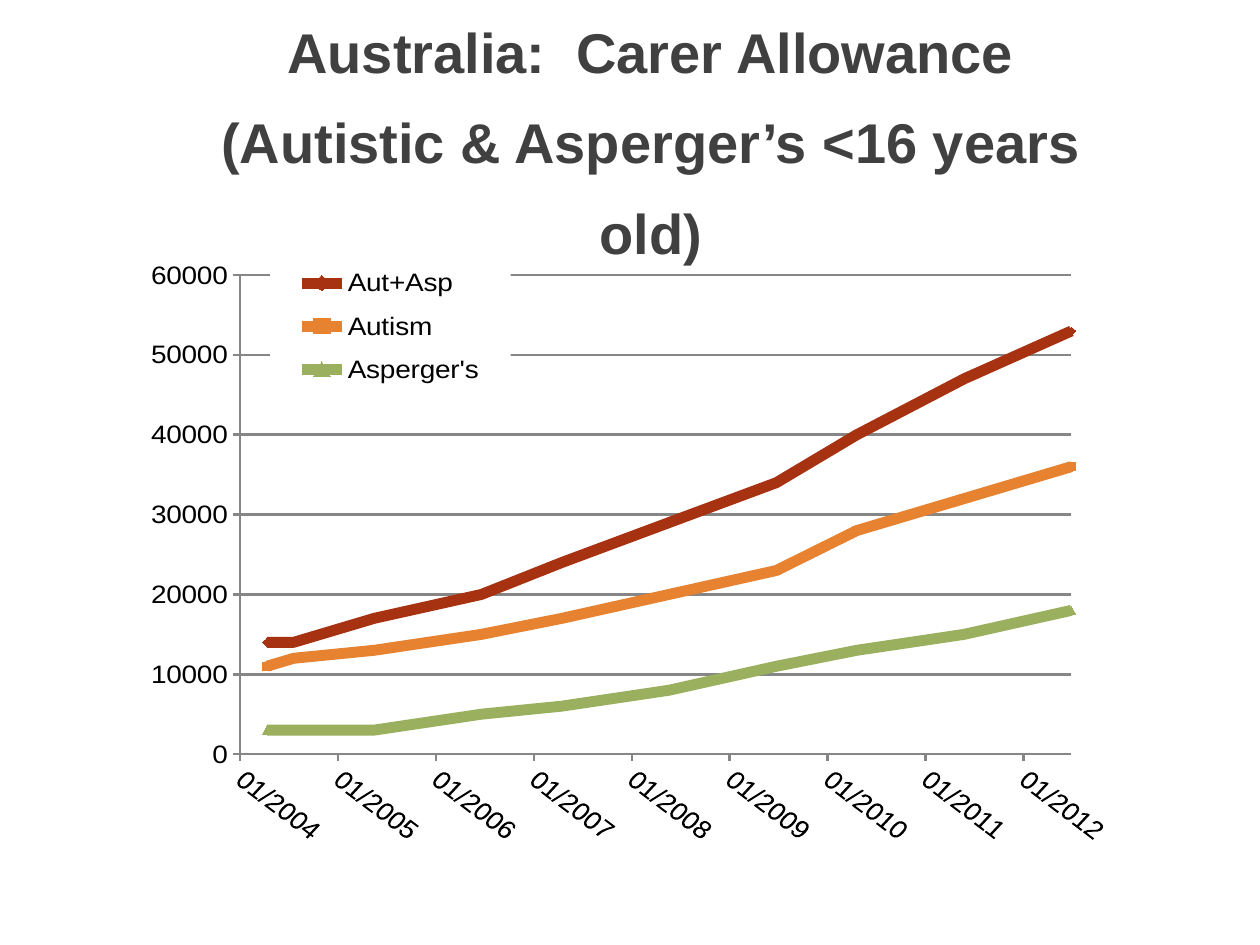
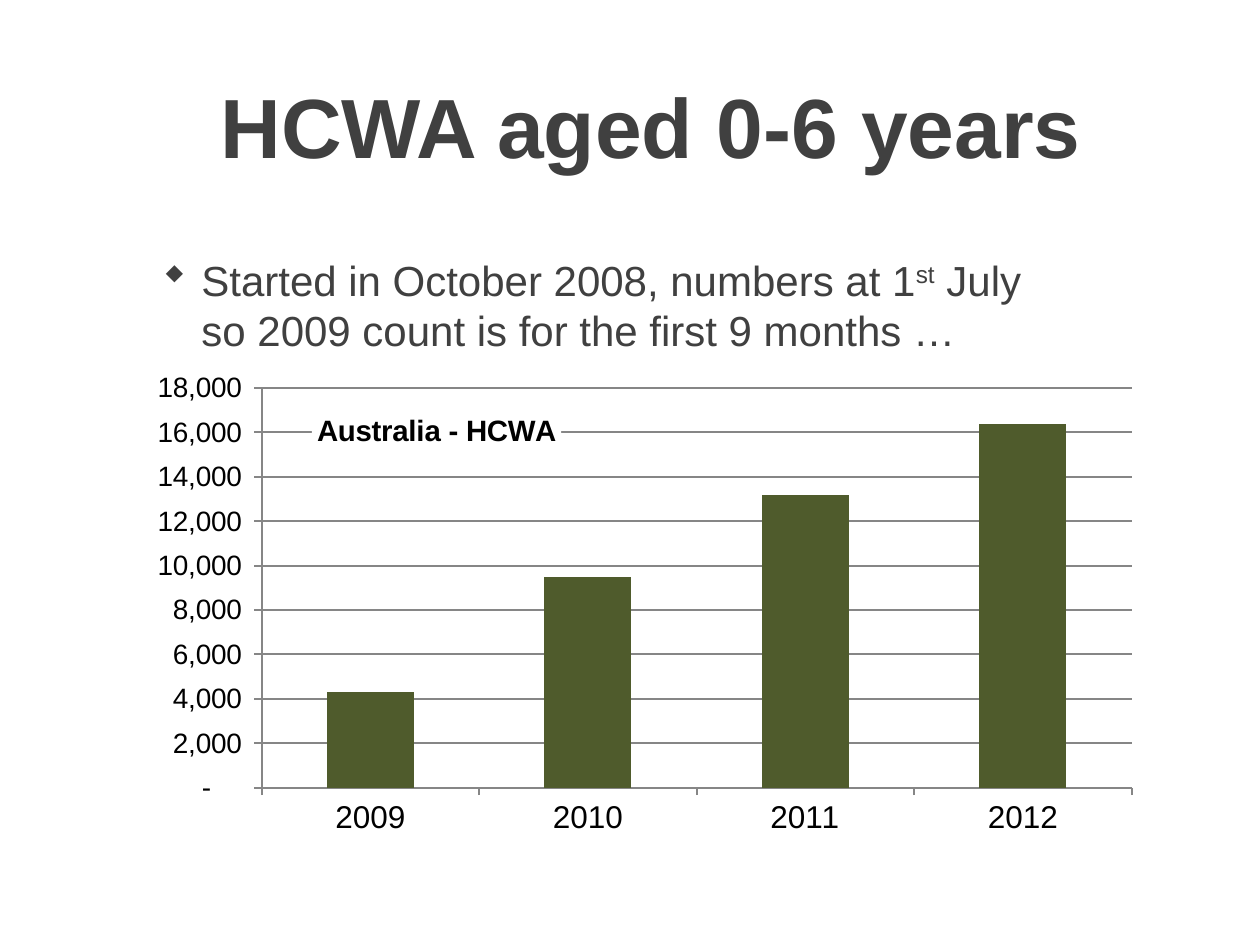
from lxml import etree
from pptx import Presentation
from pptx import util as u
from pptx.chart import data
from pptx.dml.color import RGBColor
from pptx.enum import chart as ch, text
from pptx.oxml import ns, parse_xml

FONT = "Arial"
GREY, BLACK, WHITE, RULE = "404040", "000000", "FFFFFF", "868686"
LEFT, WIDTH, TOP, HEIGHT = 1.19, 7.95, 1.97, 4.73


def color(hexa):
    return RGBColor.from_string(hexa)


def apply(obj, **values):
    for name, value in values.items():
        setattr(obj, name, value)


def style(font, size, hexa=BLACK, bold=False):
    apply(font, name=FONT, size=u.Pt(size), bold=bold)
    font.color.rgb = color(hexa)


def place(node, x, y, w=None, h=None, inner=False):
    """Give a chart part a manual layout, in fractions of the chart."""
    for old in node.findall(ns.qn("c:layout")):
        node.remove(old)
    layout = etree.Element(ns.qn("c:layout"))
    manual = etree.SubElement(layout, ns.qn("c:manualLayout"))
    parts = [("layoutTarget", "inner" if inner else None),
             ("xMode", "edge"), ("yMode", "edge"),
             ("x", x), ("y", y), ("w", w), ("h", h)]
    for name, value in parts:
        if value is not None:
            etree.SubElement(manual, ns.qn(f"c:{name}"), val=str(value))
    over = node.find(ns.qn("c:overlay"))
    node.insert(0 if over is None else node.index(over), layout)


class Deck:
    """Holds the presentation, its style and the current slide."""

    def __init__(self):
        self.prs = Presentation()
        apply(self.prs, slide_width=u.Inches(10), slide_height=u.Inches(7.5))
        self.slide = None

    def page(self, title, size):
        self.slide = self.prs.slides.add_slide(self.prs.slide_layouts[6])
        frame = self.frame(0.3, 1.46)
        frame.vertical_anchor = text.MSO_ANCHOR.MIDDLE
        para = frame.paragraphs[0]
        para.text = title
        apply(para, alignment=text.PP_ALIGN.CENTER, line_spacing=u.Pt(52))
        style(para.font, size, GREY, True)

    def frame(self, top, height):
        box = self.slide.shapes.add_textbox(
            u.Inches(LEFT), u.Inches(top), u.Inches(WIDTH), u.Inches(height))
        box.text_frame.word_wrap = True
        return box.text_frame

    def bullet(self, *runs):
        """Each run is a pair: its words and whether it is raised."""
        para = self.frame(TOP, HEIGHT).paragraphs[0]
        props = para._p.get_or_add_pPr()
        indent = u.Inches(0.31)
        props.set("marL", str(indent))
        props.set("indent", str(-indent))
        etree.SubElement(props, ns.qn("a:buFont"), typeface="Wingdings",
                         charset="2")
        etree.SubElement(props, ns.qn("a:buChar"), char="w")
        style(para.font, 24, GREY)
        for words, raised in runs:
            first, *rest = words.split("\n")
            for i, line in enumerate([first, *rest]):
                if i:
                    para.add_line_break()
                run = para.add_run()
                run.text = line
                style(run.font, 24, GREY)
                if raised:
                    run._r.get_or_add_rPr().set("baseline", "30000")

    def chart(self, kind, top, values, plot):
        height = TOP + HEIGHT - top
        chart = self.slide.shapes.add_chart(
            kind, u.Inches(LEFT), u.Inches(top), u.Inches(WIDTH),
            u.Inches(height), values).chart
        apply(chart, has_legend=False, has_title=False)
        style(chart.font, 14)
        place(chart.element.xpath(".//c:plotArea")[0], *plot, inner=True)
        return chart

    def axis(self, axis, size, form, line, grid=False, **scale):
        apply(axis, has_major_gridlines=grid,
              major_tick_mark=ch.XL_TICK_MARK.OUTSIDE,
              minor_tick_mark=ch.XL_TICK_MARK.NONE, **scale)
        style(axis.tick_labels.font, size)
        apply(axis.tick_labels, number_format=form,
              number_format_is_linked=False)
        lines = [axis.format.line]
        if grid:
            lines.append(axis.major_gridlines.format.line)
        for rule in lines:
            rule.color.rgb = color(RULE)
            rule.width = u.Pt(line)

    def legend(self, chart, size, spot):
        chart.has_legend = True
        apply(chart.legend, position=ch.XL_LEGEND_POSITION.RIGHT,
              include_in_layout=False)
        style(chart.legend.font, size)
        node = chart.element.xpath(".//c:legend")[0]
        place(node, *spot)
        fill = parse_xml(
            f'<c:spPr {ns.nsdecls("c", "a")}><a:solidFill>'
            f'<a:srgbClr val="{WHITE}"/></a:solidFill></c:spPr>')
        node.find(ns.qn("c:overlay")).addnext(fill)


def carers(deck):
    deck.page("Australia:  Carer Allowance\v"
              "(Autistic & Asperger’s <16 years old)", 32)
    days = [38100, 38200, 38500, 38900, 39200,
            39600, 40000, 40300, 40700, 41100]
    mark = ch.XL_MARKER_STYLE
    groups = [
        ("Aut+Asp", "A63212", mark.DIAMOND,
         [14000, 14000, 17000, 20000, 24000,
          29000, 34000, 40000, 47000, 53000]),
        ("Autism", "E68230", mark.SQUARE,
         [11000, 12000, 13000, 15000, 17000,
          20000, 23000, 28000, 32000, 36000]),
        ("Asperger's", "9BB05E", mark.TRIANGLE,
         [3000, 3000, 3000, 5000, 6000,
          8000, 11000, 13000, 15000, 18000]),
    ]
    values = data.XyChartData()
    for name, _, _, counts in groups:
        series = values.add_series(name)
        for day, count in zip(days, counts):
            series.add_data_point(day, count)
    chart = deck.chart(ch.XL_CHART_TYPE.XY_SCATTER_LINES, TOP, values,
                       (0.09, 0.05, 0.83, 0.89))
    for series, (_, hexa, shape, _) in zip(chart.plots[0].series, groups):
        series.smooth = False
        series.format.line.color.rgb = color(hexa)
        series.format.line.width = u.Pt(6.25)
        apply(series.marker, style=shape, size=5)
        series.marker.format.fill.solid()
        series.marker.format.fill.fore_color.rgb = color(hexa)
        series.marker.format.line.color.rgb = color(hexa)
    dates = chart.category_axis
    deck.axis(dates, 16, "mm/yyyy", 1.5, minimum_scale=38000,
              maximum_scale=41100, major_unit=365.25)
    turn = chart.element.xpath(".//c:valAx[1]/c:txPr/a:bodyPr")[0]
    turn.set("rot", str(40 * 60000))
    deck.axis(chart.value_axis, 16, "General", 1.5, True,
              minimum_scale=0, maximum_scale=60000, major_unit=10000)
    deck.legend(chart, 16, (0.12, 0.01, 0.24, 0.27))


def children(deck):
    deck.page("HCWA aged 0-6 years", 48)
    deck.bullet(("Started in October 2008, numbers at 1", False),
                ("st", True),
                (" July\nso 2009 count is for the first 9 months …", False))
    values = data.CategoryChartData()
    values.categories = [str(year) for year in range(2009, 2013)]
    values.add_series("HCWA", [4300, 9500, 13200, 16400])
    chart = deck.chart(ch.XL_CHART_TYPE.COLUMN_CLUSTERED, 2.96, values,
                       (0.11, 0.03, 0.87, 0.85))
    bars = chart.plots[0]
    apply(bars, gap_width=150, vary_by_categories=False)
    fill = bars.series[0].format.fill
    fill.solid()
    fill.fore_color.rgb = color("4F5B2C")
    deck.axis(chart.category_axis, 18, "General", 1.15)
    deck.axis(chart.value_axis, 16,
              '_-* #,##0_-;\\-* #,##0_-;_-* "-"??_-;_-@_', 1.15, True,
              minimum_scale=0, maximum_scale=18000, major_unit=2000)
    chart.has_title = True
    title = chart.chart_title
    title.text_frame.text = "Australia - HCWA"
    style(title.text_frame.paragraphs[0].runs[0].font, 16.8, bold=True)
    title.format.fill.solid()
    title.format.fill.fore_color.rgb = color(WHITE)
    place(chart.element.xpath(".//c:title")[0], 0.16, 0.07)


def main():
    deck = Deck()
    carers(deck)
    children(deck)
    deck.prs.save("out.pptx")


if __name__ == "__main__":
    main()
